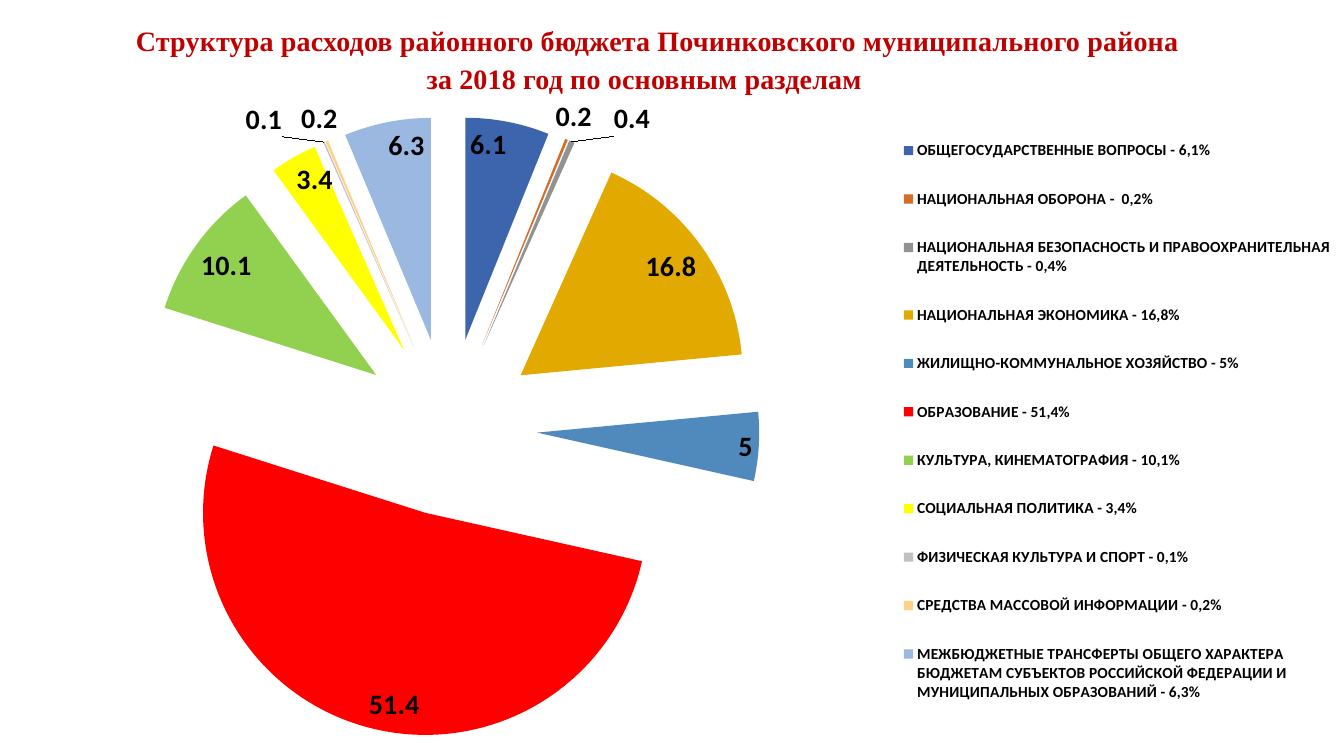
"""Build a slide with an exploded pie chart of district budget spending by section."""
from lxml import etree
from pptx import Presentation
from pptx.chart.data import CategoryChartData
from pptx.dml.color import RGBColor
from pptx.enum.chart import XL_CHART_TYPE, XL_LABEL_POSITION, XL_LEGEND_POSITION
from pptx.enum.text import MSO_ANCHOR, PP_ALIGN
from pptx.oxml.ns import qn
from pptx.util import Inches, Pt

PIE = XL_CHART_TYPE.PIE
INSIDE_END = XL_LABEL_POSITION.INSIDE_END
OUTSIDE_END = XL_LABEL_POSITION.OUTSIDE_END
LEGEND_RIGHT = XL_LEGEND_POSITION.RIGHT
CENTER = PP_ALIGN.CENTER
TOP = MSO_ANCHOR.TOP

DARK_RED = RGBColor(0xC0, 0x00, 0x00)
BLACK = RGBColor(0x00, 0x00, 0x00)
BLUE = RGBColor(0x3D, 0x65, 0xAD)
ORANGE = RGBColor(0xD2, 0x6E, 0x2A)
GRAY = RGBColor(0x92, 0x92, 0x92)
GOLD = RGBColor(0xE2, 0xAA, 0x00)
SKY_BLUE = RGBColor(0x50, 0x8A, 0xBD)
RED = RGBColor(0xFF, 0x00, 0x00)
GREEN = RGBColor(0x92, 0xD0, 0x50)
YELLOW = RGBColor(0xFF, 0xFF, 0x00)
LIGHT_GRAY = RGBColor(0xC0, 0xC0, 0xC0)
LIGHT_GOLD = RGBColor(0xFF, 0xD1, 0x85)
LIGHT_BLUE = RGBColor(0x9A, 0xB8, 0xE0)

TITLE_LINES = [
    ("Структура расходов районного бюджета Починковского муниципального района", 0.75, 0),
    ("за 2018 год по основным разделам", 0, 0.49),
]
SECTIONS = [
    ("ОБЩЕГОСУДАРСТВЕННЫЕ ВОПРОСЫ - 6,1%", 6.1, BLUE),
    ("НАЦИОНАЛЬНАЯ ОБОРОНА -  0,2%", 0.2, ORANGE),
    ("НАЦИОНАЛЬНАЯ БЕЗОПАСНОСТЬ И ПРАВООХРАНИТЕЛЬНАЯ ДЕЯТЕЛЬНОСТЬ - 0,4%", 0.4, GRAY),
    ("НАЦИОНАЛЬНАЯ ЭКОНОМИКА - 16,8%", 16.8, GOLD),
    ("ЖИЛИЩНО-КОММУНАЛЬНОЕ ХОЗЯЙСТВО - 5%", 5, SKY_BLUE),
    ("ОБРАЗОВАНИЕ - 51,4%", 51.4, RED),
    ("КУЛЬТУРА, КИНЕМАТОГРАФИЯ - 10,1%", 10.1, GREEN),
    ("СОЦИАЛЬНАЯ ПОЛИТИКА - 3,4%", 3.4, YELLOW),
    ("ФИЗИЧЕСКАЯ КУЛЬТУРА И СПОРТ - 0,1%", 0.1, LIGHT_GRAY),
    ("СРЕДСТВА МАССОВОЙ ИНФОРМАЦИИ - 0,2%", 0.2, LIGHT_GOLD),
    ("МЕЖБЮДЖЕТНЫЕ ТРАНСФЕРТЫ ОБЩЕГО ХАРАКТЕРА БЮДЖЕТАМ СУБЪЕКТОВ РОССИЙСКОЙ "
     "ФЕДЕРАЦИИ И МУНИЦИПАЛЬНЫХ ОБРАЗОВАНИЙ - 6,3%", 6.3, LIGHT_BLUE),
]
LABEL_SHIFTS = {1: -0.01, 2: 0.03, 8: -0.03, 9: 0.01}


def make_layout(**settings):
    layout = etree.Element(qn("c:layout"))
    manual = etree.SubElement(layout, qn("c:manualLayout"))
    for name, value in settings.items():
        etree.SubElement(manual, qn(f"c:{name}")).set("val", str(value))
    return layout


def format_font(font, size):
    font.name = "Calibri"
    font.size = Pt(size)
    font.bold = True
    font.color.rgb = BLACK


presentation = Presentation()
presentation.slide_width = Inches(13.33)
presentation.slide_height = Inches(7.5)
slide = presentation.slides.add_slide(presentation.slide_layouts[5])

title = slide.shapes.title
title.left, title.top = Inches(-0.4), Inches(0.13)
title.width, title.height = Inches(13.09), Inches(0.85)
title_frame = title.text_frame
title_frame.word_wrap = True
title_frame.vertical_anchor = TOP
for index, (line, margin, indent) in enumerate(TITLE_LINES):
    paragraph = title_frame.add_paragraph() if index else title_frame.paragraphs[0]
    paragraph.alignment = CENTER
    paragraph.line_spacing = 1.15
    paragraph.space_before = Pt(0)
    properties = paragraph._p.get_or_add_pPr()
    properties.set("marL", str(Inches(margin)))
    properties.set("indent", str(Inches(indent)))
    run = paragraph.add_run()
    run.text = line
    run.font.name = "Times New Roman"
    run.font.size = Pt(20)
    run.font.bold = True
    run.font.color.rgb = DARK_RED
    run.font._element.set("spc", "10")

chart_data = CategoryChartData()
chart_data.categories = [name for name, value, color in SECTIONS]
chart_data.add_series("Series 1", [value for name, value, color in SECTIONS])
chart = slide.shapes.add_chart(
    PIE, Inches(0.18), Inches(0.98), Inches(13.09), Inches(6.4), chart_data
).chart
chart.has_title = False
chart.font.name = "Calibri"
chart.font.size = Pt(10)
chart.font.color.rgb = BLACK

plot_area = chart._chartSpace.chart.plotArea
for layout in plot_area.findall(qn("c:layout")):
    plot_area.remove(layout)
plot_area.insert(0, make_layout(
    layoutTarget="inner", xMode="edge", yMode="edge", x=0, y=0.027, w=0.652, h=0.964))

chart.has_legend = True
legend = chart.legend
legend.position = LEGEND_RIGHT
legend.include_in_layout = False
format_font(legend.font, 11)
for layout in legend._element.findall(qn("c:layout")):
    legend._element.remove(layout)
legend._element.find(qn("c:legendPos")).addnext(make_layout(
    xMode="edge", yMode="edge", x=0.67, y=0.02, w=0.33, h=0.96))

plot = chart.plots[0]
plot.vary_by_categories = True
series = plot.series[0]
explosion = etree.Element(qn("c:explosion"))
explosion.set("val", "40")
series._element.find(qn("c:tx")).addnext(explosion)

labels = series.data_labels
labels.show_value = True
labels.position = INSIDE_END
format_font(labels.font, 20)
labels._element.find(qn("c:showLeaderLines")).set("val", "1")

for index, (name, value, color) in enumerate(SECTIONS):
    point = series.points[index]
    point.format.fill.solid()
    point.format.fill.fore_color.rgb = color
    point.format.line.fill.background()
    if index in LABEL_SHIFTS:
        label = point.data_label
        format_font(label.font, 20)
        label.position = OUTSIDE_END
        label._dLbl.insert(1, make_layout(x=LABEL_SHIFTS[index], y=0))

presentation.save("out.pptx")
